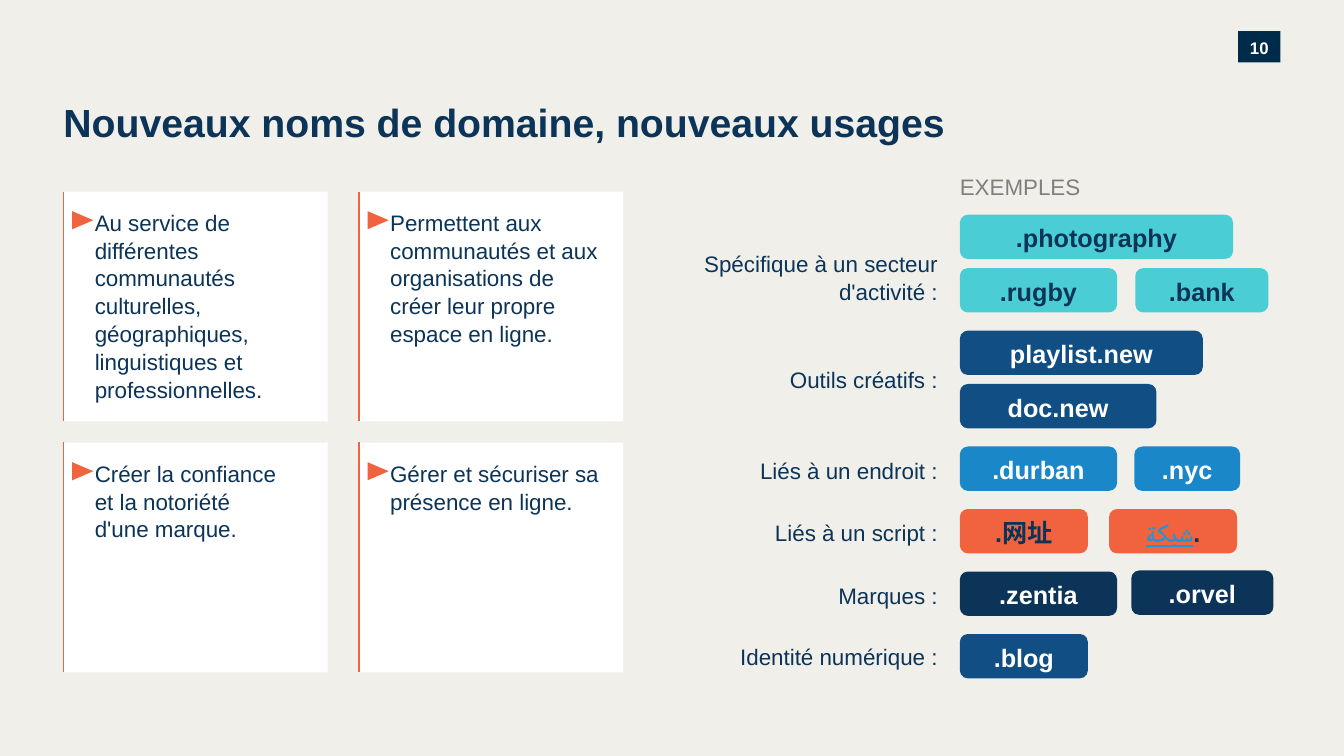
from pptx import Presentation
from pptx import util as u
from pptx.dml.color import RGBColor
from pptx.enum import shapes, text
from pptx.oxml.ns import qn
from lxml import etree

NAVY, BLUE, SKY, TEAL = "0B3458", "114E84", "1A87C9", "4BCDD5"
CORAL, WHITE, GREY = "F1633E", "FFFFFF", "7F7F7F"
LEFT, RIGHT = text.PP_ALIGN.LEFT, text.PP_ALIGN.RIGHT
MID = text.PP_ALIGN.CENTER
KIND = shapes.MSO_SHAPE

prs = Presentation()
prs.slide_width, prs.slide_height = u.Inches(13.33), u.Inches(7.5)
slide = prs.slides.add_slide(prs.slide_layouts[6])
hue = RGBColor.from_string
slide.background.fill.solid()
slide.background.fill.fore_color.rgb = hue("F1EFEA")


def draw(kind, box, fill=None):
    """Add a filled shape, or a text box when there is no kind."""
    place = [u.Inches(n) for n in box]
    if kind is None:
        return slide.shapes.add_textbox(*place)
    shape = slide.shapes.add_shape(kind, *place)
    shape.shadow.inherit = False
    shape.fill.solid()
    shape.fill.fore_color.rgb = hue(fill)
    shape.line.fill.background()
    return shape


def write(shape, runs, size, align=LEFT, bold=False, space=1.04, pad=(0, 0, 0, 0)):
    """Fill a shape with one paragraph of (words, colour, underline) runs."""
    frame = shape.text_frame
    frame.word_wrap = True
    frame.margin_left, frame.margin_top, frame.margin_right, frame.margin_bottom = [
        u.Inches(n) for n in pad]
    frame.vertical_anchor = text.MSO_ANCHOR.MIDDLE if align == MID else text.MSO_ANCHOR.TOP
    para = frame.paragraphs[0]
    para.alignment, para.line_spacing = align, space
    for words, ink, under in runs:
        run = para.add_run()
        run.text = words
        font = run.font
        font.name, font.size, font.bold = "Arial", u.Pt(size), bold
        font.underline = under
        font.color.rgb = hue(ink)
    return frame


# Page number and title
page = draw(KIND.RECTANGLE, (12.28, 0.31, 0.42, 0.31), "002A49")
write(page, [("10", WHITE, False)], 12, MID, True, 1.08)
title = draw(None, (0.63, 0.98, 8.97, 0.56))
write(title, [("Nouveaux noms de domaine, nouveaux usages", NAVY, False)],
      28, bold=True, space=1)

# Cards: column, row, right inset, words
cards = [
    (0, 0, 0.24, "Au service de différentes communautés culturelles, "
                 "géographiques, linguistiques et professionnelles."),
    (1, 0, 0.2, "Permettent aux communautés et aux organisations de créer "
                "leur propre espace en ligne."),
    (0, 1, 0.39, "Créer la confiance et la notoriété d'une marque."),
    (1, 1, 0.2, "Gérer et sécuriser sa présence en ligne."),
]
for col, row, inset, words in cards:
    x, y = 0.63 + 2.93 * col, 1.9 + 2.49 * row
    card = draw(KIND.RECTANGLE, (x, y, 2.62, 2.28), WHITE)
    write(card, [(words, NAVY, False)], 16, pad=(0.31, 0.16, inset, 0.2))
    mark = draw(KIND.ISOSCELES_TRIANGLE, (x + 0.1, y + 0.18, 0.18, 0.21), CORAL)
    mark.rotation = 90
    edge = slide.shapes.add_connector(
        shapes.MSO_CONNECTOR.STRAIGHT,
        *[u.Inches(n) for n in (x, y, x, y + 2.28)])
    edge.line.color.rgb = hue(CORAL)
    edge.line.width = u.Pt(1.25)
    etree.SubElement(edge.element.spPr, qn("a:effectLst"))

# Examples: label, label top, fill, ink, tags (left, top, width, words)
head = draw(None, (9.52, 1.71, 3.29, 0.27))
write(head, [("EXEMPLES", GREY, False)], 16)
START = 9.52
groups = [
    ("Spécifique à un secteur d'activité :", 2.47, TEAL, NAVY,
     [(START, 2.13, 2.71, ".photography"), (START, 2.66, 1.56, ".rugby"),
      (11.26, 2.66, 1.32, ".bank")]),
    ("Outils créatifs :", 3.62, BLUE, WHITE,
     [(START, 3.28, 2.41, "playlist.new"), (START, 3.81, 1.95, "doc.new")]),
    ("Liés à un endroit :", 4.52, SKY, WHITE,
     [(START, 4.43, 1.56, ".durban"), (11.25, 4.43, 1.05, ".nyc")]),
    ("Liés à un script :", 5.14, CORAL, NAVY,
     [(START, 5.05, 1.27, ".网址"), (11, 5.05, 1.27, "شبكة.")]),
    ("Marques :", 5.76, NAVY, WHITE,
     [(START, 5.67, 1.56, ".zentia"), (11.22, 5.66, 1.41, ".orvel")]),
    ("Identité numérique :", 6.37, BLUE, WHITE,
     [(START, 6.29, 1.27, ".blog")]),
]
for label, top, fill, ink, tags in groups:
    name = draw(None, (6.18, top, 3.12, 0.27))
    frame = write(name, [(label, NAVY, False)], 16, RIGHT)
    frame.auto_size = text.MSO_AUTO_SIZE.SHAPE_TO_FIT_TEXT
    for x, y, wide, words in tags:
        tag = draw(KIND.ROUNDED_RECTANGLE, (x, y, wide, 0.44), fill)
        tag.adjustments[0] = 0.18
        runs = [(words, ink, False)]
        if words.endswith("."):
            runs = [(words[:-1], "1D98D3", True), (".", ink, False)]
        write(tag, runs, 18, MID, True, 1.06)

prs.save("out.pptx")
